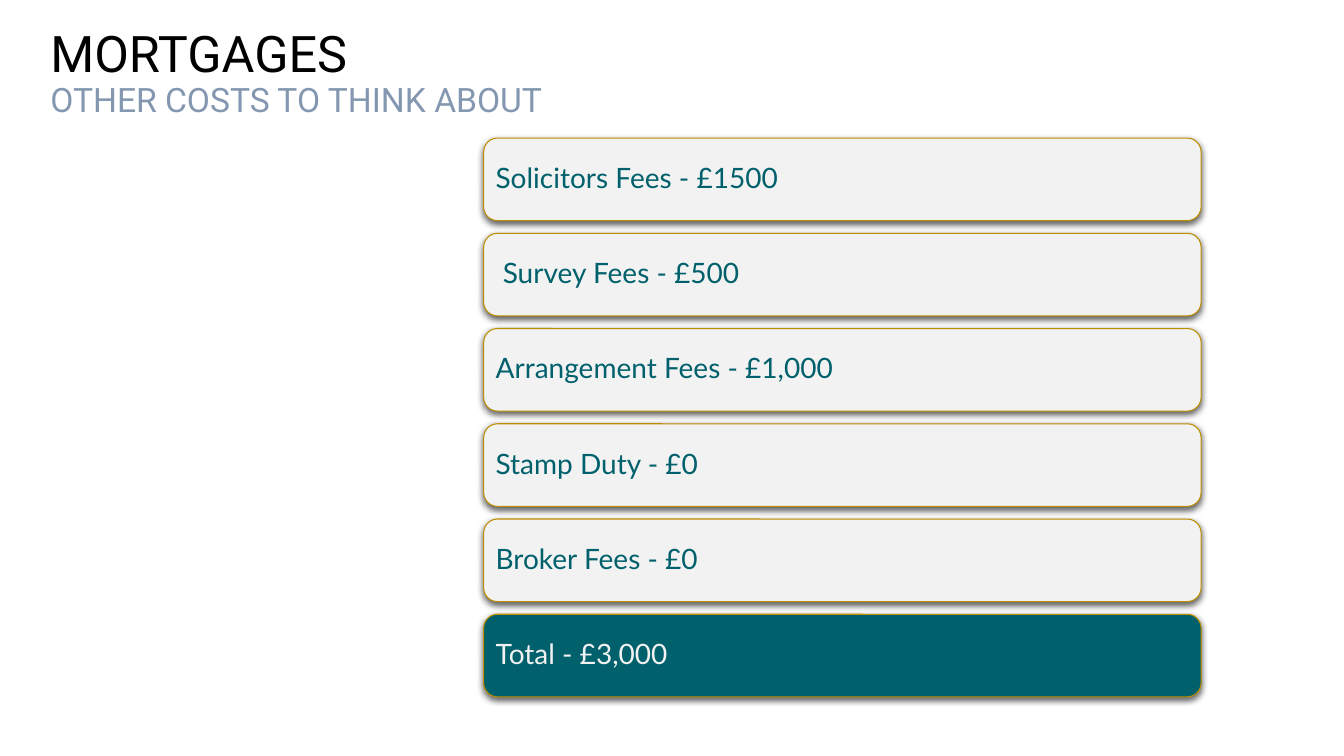
"""Build the slide listing the extra costs of a mortgage."""
import lxml.etree
import pptx
import pptx.dml.color
import pptx.enum.shapes
import pptx.enum.text
import pptx.oxml
import pptx.oxml.ns
import pptx.util

Cm = pptx.util.Cm
Pt = pptx.util.Pt
RGBColor = pptx.dml.color.RGBColor

BLACK = RGBColor(0x00, 0x00, 0x00)
SLATE = RGBColor(0x84, 0x97, 0xB0)
TEAL = RGBColor(0x00, 0x60, 0x6B)
PALE = RGBColor(0xF2, 0xF2, 0xF2)
GOLD = RGBColor(0xBD, 0x8E, 0x00)

CARD_SHADOW = (
    f'<a:outerShdw {pptx.oxml.ns.nsdecls("a")} blurRad="57150" dist="19050" '
    'dir="5400000" algn="ctr" rotWithShape="0">'
    '<a:srgbClr val="000000"><a:alpha val="63000"/></a:srgbClr></a:outerShdw>'
)

COSTS = [
    "Solicitors Fees - £1500",
    " Survey Fees - £500",
    "Arrangement Fees - £1,000",
    "Stamp Duty - £0",
    "Broker Fees - £0",
]
TOTAL = "Total - £3,000"
FIRST_TOP = 3.48
PITCH = 2.4


class CostSlide:
    """Hold the shared style and the slide being drawn."""

    heading_font = "Roboto"
    card_font = "Lato"

    def __init__(self, slide):
        self.slide = slide

    def style(self, paragraph, font, size, color):
        paragraph.alignment = pptx.enum.text.PP_ALIGN.LEFT
        paragraph.line_spacing = 0.9
        for run in paragraph.runs:
            run.font.name = font
            run.font.size = Pt(size)
            run.font.color.rgb = color

    def heading(self, title, subtitle):
        box = self.slide.shapes.add_textbox(Cm(1.02), Cm(0.86), Cm(25.88), Cm(2.03))
        frame = box.text_frame
        frame.word_wrap = True
        frame.vertical_anchor = pptx.enum.text.MSO_ANCHOR.MIDDLE
        frame.text = f"{title}\n{subtitle}"
        title_line, subtitle_line = frame.paragraphs
        self.style(title_line, self.heading_font, 36, BLACK)
        self.style(subtitle_line, self.heading_font, 24, SLATE)

    def card(self, top, label, fill, color):
        card = self.slide.shapes.add_shape(
            pptx.enum.shapes.MSO_SHAPE.ROUNDED_RECTANGLE,
            Cm(12.19), Cm(top), Cm(18.08), Cm(2.08),
        )
        card.fill.solid()
        card.fill.fore_color.rgb = fill
        card.line.color.rgb = GOLD
        card.line.width = Pt(0.75)
        card.shadow.inherit = False
        effects = card.element.spPr.find(pptx.oxml.ns.qn("a:effectLst"))
        effects.append(pptx.oxml.parse_xml(CARD_SHADOW))

        frame = card.text_frame
        frame.word_wrap = True
        frame.vertical_anchor = pptx.enum.text.MSO_ANCHOR.MIDDLE
        frame.margin_left = frame.margin_right = Cm(0.2)
        frame.text = label
        self.style(frame.paragraphs[0], self.card_font, 20, color)


def main():
    deck = pptx.Presentation()
    deck.slide_width = Cm(33.87)
    deck.slide_height = Cm(19.05)
    costs = CostSlide(deck.slides.add_slide(deck.slide_layouts[6]))

    costs.heading("MORTGAGES", "OTHER COSTS TO THINK ABOUT")
    for row, cost in enumerate(COSTS):
        costs.card(FIRST_TOP + row * PITCH, cost, PALE, TEAL)
    costs.card(FIRST_TOP + len(COSTS) * PITCH, TOTAL, TEAL, PALE)

    deck.save("out.pptx")


if __name__ == "__main__":
    main()
